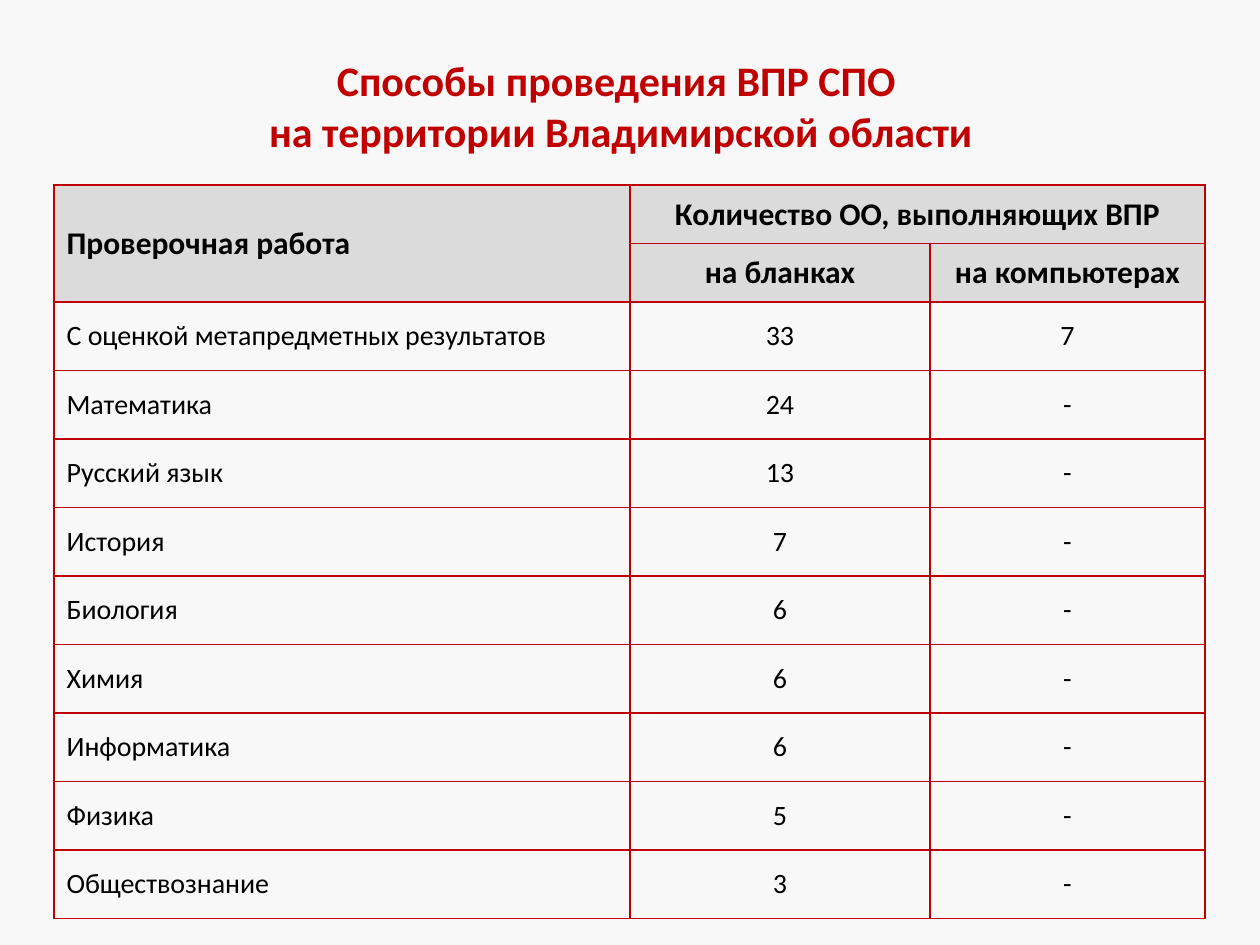
from lxml import etree
from pptx import Presentation, util as u
from pptx.dml.color import RGBColor
from pptx.enum import text
from pptx.oxml.ns import qn

# Content
TITLE = ["Способы проведения ВПР СПО ", "на территории Владимирской области"]
HEADER = [
    ("Проверочная работа", "Количество ОО, выполняющих ВПР", ""),
    ("", "на бланках", "на компьютерах"),
]
BODY = [
    ("С оценкой метапредметных результатов", "33", "7"),
    ("Математика", "24", "-"),
    ("Русский язык", "13", "-"),
    ("История", "7", "-"),
    ("Биология", "6", "-"),
    ("Химия", "6", "-"),
    ("Информатика", "6", "-"),
    ("Физика", "5", "-"),
    ("Обществознание", "3", "-"),
]

RED = RGBColor(0xC0, 0x00, 0x00)
BLACK = RGBColor(0x00, 0x00, 0x00)
GREY = RGBColor(0xDB, 0xDB, 0xDB)
PAPER = RGBColor(0xF8, 0xF8, 0xF8)
FONT = "Calibri"

# Layout in px
PX = 914400 / 126
SLIDE_W, SLIDE_H = 1260, 945
TITLE_BOX = (54, 26, 1134, 158)
TABLE_X, TABLE_Y = 54, 185
COLS = [576, 300, 275]
HEADER_H, BODY_H = 117, 617


def px(n):
    return u.Emu(round(n * PX))


def add_run(p, words, size, color, bold):
    r = p.add_run()
    r.text = words
    r.font.name, r.font.size, r.font.bold = FONT, u.Pt(size), bold
    r.font.color.rgb = color


def set_borders(cell):
    tcPr = cell._tc.get_or_add_tcPr()
    for i, side in enumerate(("lnL", "lnR", "lnT", "lnB")):
        ln = etree.Element(qn("a:" + side), w=str(u.Pt(1)))
        fill = etree.SubElement(ln, qn("a:solidFill"))
        etree.SubElement(fill, qn("a:srgbClr"), val=str(RED))
        tcPr.insert(i, ln)


prs = Presentation()
prs.slide_width, prs.slide_height = px(SLIDE_W), px(SLIDE_H)
s = prs.slides.add_slide(prs.slide_layouts[6])
s.background.fill.solid()
s.background.fill.fore_color.rgb = PAPER

# Title
tf = s.shapes.add_textbox(*map(px, TITLE_BOX)).text_frame
tf.word_wrap = True
tf.vertical_anchor = text.MSO_ANCHOR.MIDDLE
p = tf.paragraphs[0]
p.alignment = text.PP_ALIGN.CENTER
for i, line in enumerate(TITLE):
    if i:
        p.add_line_break()
    add_run(p, line, 24, RED, True)

# Table grid
rows = HEADER + BODY
heights = [HEADER_H / len(HEADER)] * len(HEADER) + [BODY_H / len(BODY)] * len(BODY)
table = s.shapes.add_table(len(rows), len(COLS), px(TABLE_X), px(TABLE_Y),
                           px(sum(COLS)), px(sum(heights))).table
table.first_row = table.horz_banding = False
for col, w in zip(table.columns, COLS):
    col.width = px(w)
for row, h in zip(table.rows, heights):
    row.height = px(h)
table.cell(0, 0).merge(table.cell(1, 0))
table.cell(0, 1).merge(table.cell(0, 2))

# Table cells
for i, row in enumerate(rows):
    is_header = i < len(HEADER)
    for j, words in enumerate(row):
        cell = table.cell(i, j)
        cell.vertical_anchor = text.MSO_ANCHOR.MIDDLE
        if is_header:
            cell.fill.solid()
            cell.fill.fore_color.rgb = GREY
        else:
            cell.fill.background()
        set_borders(cell)
        if words:
            p = cell.text_frame.paragraphs[0]
            p.alignment = text.PP_ALIGN.CENTER if j else text.PP_ALIGN.LEFT
            add_run(p, words, 18 if is_header else 16, BLACK, is_header)

prs.save("out.pptx")
